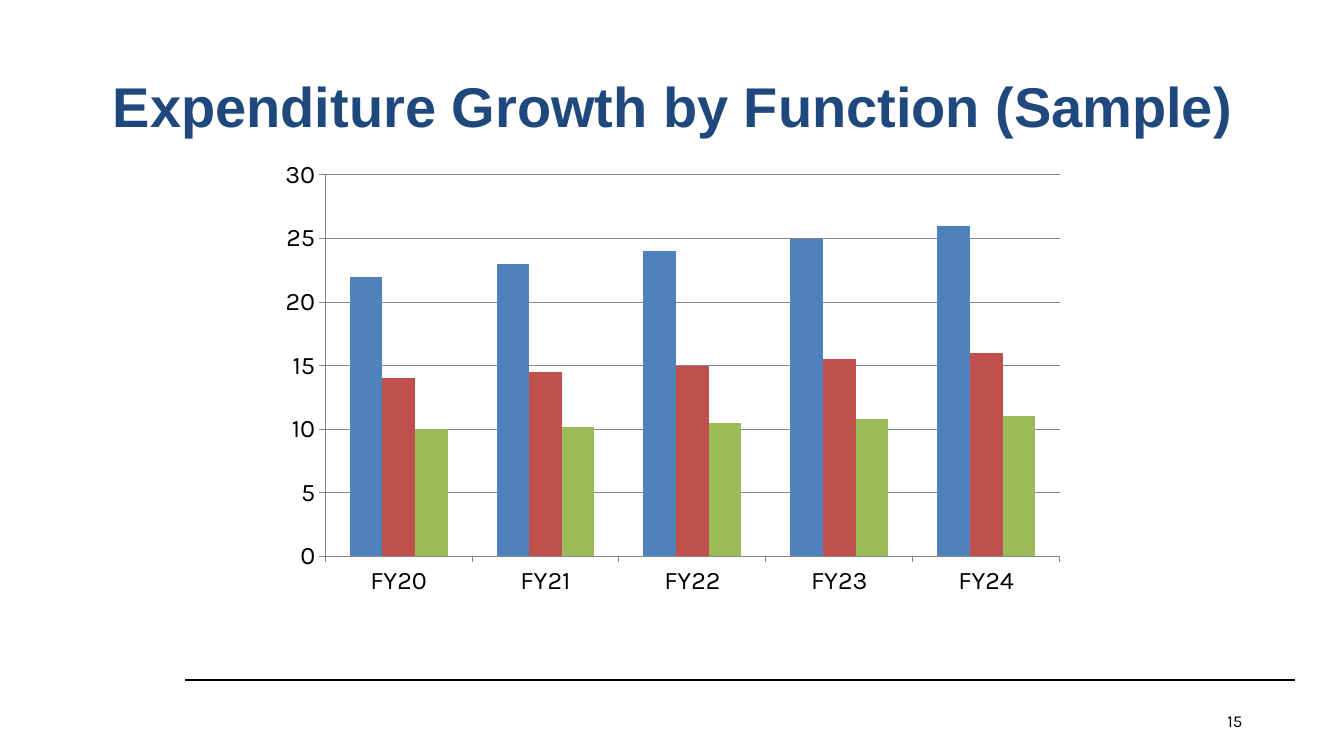
from lxml import etree
from pptx import Presentation
from pptx.chart.data import CategoryChartData
from pptx.dml.color import RGBColor
from pptx.enum.chart import XL_CHART_TYPE, XL_TICK_MARK
from pptx.enum.shapes import MSO_CONNECTOR
from pptx.enum.text import MSO_ANCHOR, MSO_AUTO_SIZE, PP_ALIGN
from pptx.oxml.ns import qn
from pptx.util import Inches, Pt

BLACK = RGBColor(0x00, 0x00, 0x00)
NAVY = RGBColor(0x1F, 0x49, 0x7D)
GREY = RGBColor(0x86, 0x86, 0x86)
BLUE = RGBColor(0x4F, 0x81, 0xBD)
RED = RGBColor(0xC0, 0x50, 0x4D)
GREEN = RGBColor(0x9B, 0xBB, 0x59)

YEARS = ["FY20", "FY21", "FY22", "FY23", "FY24"]
SERIES = [
    ("Series 1", BLUE, [22, 23, 24, 25, 26]),
    ("Series 2", RED, [14, 14.5, 15, 15.5, 16]),
    ("Series 3", GREEN, [10, 10.2, 10.5, 10.8, 11]),
]


class Deck:
    """Holds the style and the current slide."""

    head_font = "Arial"
    body_font = "Karla"

    def __init__(self):
        self.deck = Presentation()
        self.deck.slide_width = Inches(13.33)
        self.deck.slide_height = Inches(7.5)
        self.slide = self.deck.slides.add_slide(self.deck.slide_layouts[5])

    def style(self, font, name, size, color, bold=False):
        font.name = name
        font.size = Pt(size)
        font.bold = bold
        font.color.rgb = color

    def put_text(self, shape, text, align, anchor):
        frame = shape.text_frame
        frame.text = text
        frame.word_wrap = True
        frame.vertical_anchor = anchor
        line = frame.paragraphs[0]
        line.alignment = align
        return line.font

    def title(self, text, left, top, width, height):
        shape = self.slide.shapes.title
        shape.left, shape.top = Inches(left), Inches(top)
        shape.width, shape.height = Inches(width), Inches(height)
        font = self.put_text(shape, text, PP_ALIGN.CENTER, MSO_ANCHOR.TOP)
        self.style(font, self.head_font, 40, NAVY, bold=True)
        shape.text_frame.auto_size = MSO_AUTO_SIZE.SHAPE_TO_FIT_TEXT

    def label(self, text, left, top, width, height):
        box = self.slide.shapes.add_textbox(
            Inches(left), Inches(top), Inches(width), Inches(height))
        font = self.put_text(box, text, PP_ALIGN.RIGHT, MSO_ANCHOR.MIDDLE)
        self.style(font, self.body_font, 12, BLACK)

    def rule(self, left, right, top):
        line = self.slide.shapes.add_connector(
            MSO_CONNECTOR.STRAIGHT,
            Inches(left), Inches(top), Inches(right), Inches(top))
        line.line.color.rgb = BLACK
        line.line.width = Pt(1.5)
        etree.SubElement(line._element.spPr, qn("a:effectLst"))

    def columns(self, cats, series, left, top, width, height):
        data = CategoryChartData()
        data.categories = cats
        for name, _, values in series:
            data.add_series(name, values)
        chart = self.slide.shapes.add_chart(
            XL_CHART_TYPE.COLUMN_CLUSTERED, Inches(left), Inches(top),
            Inches(width), Inches(height), data).chart
        chart.has_legend = False
        chart.has_title = False
        self.style(chart.font, self.body_font, 18, BLACK)

        # Bars
        plot = chart.plots[0]
        plot.gap_width = 150
        plot.vary_by_categories = False
        for bars, (_, color, _) in zip(plot.series, series):
            bars.format.fill.solid()
            bars.format.fill.fore_color.rgb = color

        # Axes and grid
        scale = chart.value_axis
        scale.minimum_scale, scale.maximum_scale = 0, 30
        scale.major_unit = 5
        scale.has_major_gridlines = True
        for axis in (chart.category_axis, scale):
            axis.major_tick_mark = XL_TICK_MARK.OUTSIDE
        for part in (chart.category_axis, scale, scale.major_gridlines):
            part.format.line.color.rgb = GREY
            part.format.line.width = Pt(0.75)


def main():
    page = Deck()

    # Footer
    page.rule(1.84, 12.84, 6.75)
    page.label("15", 9.42, 6.95, 3, 0.4)

    # Title and chart
    page.title("Expenditure Growth by Function (Sample)", 0.42, 0.66, 12.5, 1.25)
    page.columns(YEARS, SERIES, 2.67, 1.5, 8, 4.5)

    page.deck.save("out.pptx")


if __name__ == "__main__":
    main()
